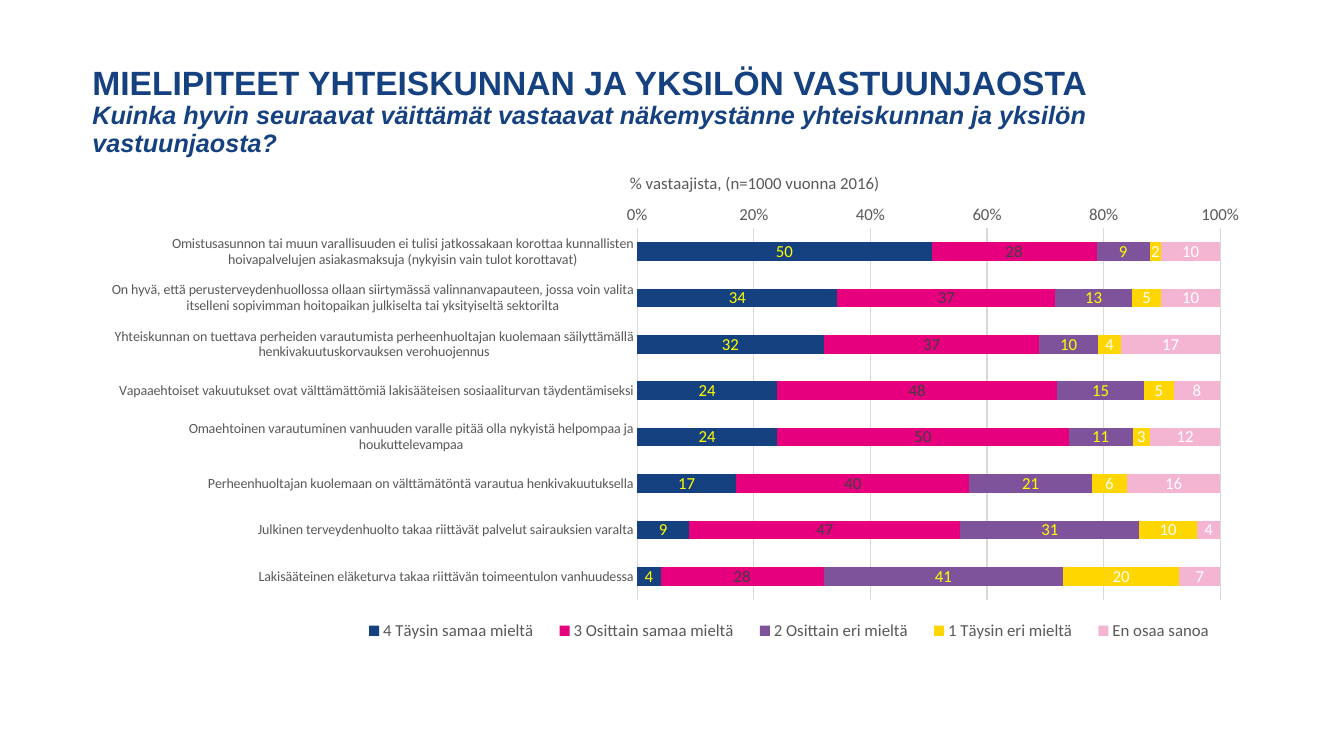
"""Build a slide with a stacked bar chart of opinions on shared responsibility."""
import lxml.etree
import pptx
import pptx.chart.data
import pptx.dml.color
import pptx.enum.chart
import pptx.enum.text
import pptx.oxml.ns
import pptx.util
from pptx.util import Cm, Pt


def color(hex_string):
    return pptx.dml.color.RGBColor.from_string(hex_string)


def place_chart_part(part, **fractions):
    qn = pptx.oxml.ns.qn
    for old_layout in part.findall(qn("c:layout")):
        part.remove(old_layout)
    layout = lxml.etree.Element(qn("c:layout"))
    manual = lxml.etree.SubElement(layout, qn("c:manualLayout"))
    settings = {"xMode": "edge", "yMode": "edge", **fractions}
    if part.tag == qn("c:plotArea"):
        settings = {"layoutTarget": "inner", **settings}
    for name, value in settings.items():
        lxml.etree.SubElement(manual, qn("c:" + name)).set("val", str(value))
    overlay = part.find(qn("c:overlay"))
    part.insert(0 if overlay is None else part.index(overlay), layout)


statements = [
    "Omistusasunnon tai muun varallisuuden ei tulisi jatkossakaan korottaa kunnallisten "
    "hoivapalvelujen asiakasmaksuja (nykyisin vain tulot korottavat)",
    "On hyvä, että perusterveydenhuollossa ollaan siirtymässä valinnanvapauteen, jossa voin "
    "valita itselleni sopivimman hoitopaikan julkiselta tai yksityiseltä sektorilta",
    "Yhteiskunnan on tuettava perheiden varautumista perheenhuoltajan kuolemaan "
    "säilyttämällä henkivakuutuskorvauksen verohuojennus",
    "Vapaaehtoiset vakuutukset ovat välttämättömiä lakisääteisen sosiaaliturvan täydentämiseksi",
    "Omaehtoinen varautuminen vanhuuden varalle pitää olla nykyistä helpompaa ja houkuttelevampaa",
    "Perheenhuoltajan kuolemaan on välttämätöntä varautua henkivakuutuksella",
    "Julkinen terveydenhuolto takaa riittävät palvelut sairauksien varalta",
    "Lakisääteinen eläketurva takaa riittävän toimeentulon vanhuudessa",
]
answers = [
    ("4 Täysin samaa mieltä", [50, 34, 32, 24, 24, 17, 9, 4], "164180", "FFFF00"),
    ("3 Osittain samaa mieltä", [28, 37, 37, 48, 50, 40, 47, 28], "E6007E", "404040"),
    ("2 Osittain eri mieltä", [9, 13, 10, 15, 11, 21, 31, 41], "7F539C", "FFFF00"),
    ("1 Täysin eri mieltä", [2, 5, 4, 5, 3, 6, 10, 20], "FFD600", "FFFFFF"),
    ("En osaa sanoa", [10, 10, 17, 8, 12, 16, 4, 7], "F4B5D3", "FFFFFF"),
]

presentation = pptx.Presentation()
presentation.slide_width = Cm(33.87)
presentation.slide_height = Cm(19.05)
slide = presentation.slides.add_slide(presentation.slide_layouts[6])

title_box = slide.shapes.add_textbox(Cm(2.08), Cm(0.99), Cm(29.21), Cm(3.68))
title_frame = title_box.text_frame
title_frame.word_wrap = True
title_frame.vertical_anchor = pptx.enum.text.MSO_ANCHOR.MIDDLE
title_frame.text = (
    "MIELIPITEET YHTEISKUNNAN JA YKSILÖN VASTUUNJAOSTA\v"
    "Kuinka hyvin seuraavat väittämät vastaavat näkemystänne yhteiskunnan ja yksilön vastuunjaosta?"
)
title_paragraph = title_frame.paragraphs[0]
title_paragraph.line_spacing = 0.9
for run, size, italic in zip(title_paragraph.runs, (24, 18), (False, True)):
    run.font.name = "Arial"
    run.font.size = Pt(size)
    run.font.bold = True
    run.font.italic = italic
    run.font.color.rgb = color("164180")

chart_data = pptx.chart.data.CategoryChartData(number_format="0")
chart_data.categories = statements
for name, values, fill, label_color in answers:
    chart_data.add_series(name, values)
chart = slide.shapes.add_chart(
    pptx.enum.chart.XL_CHART_TYPE.BAR_STACKED_100,
    Cm(2.36), Cm(3.99), Cm(29.21), Cm(12.4), chart_data,
).chart
chart.font.name = "Calibri"
chart.font.size = Pt(10)

chart.has_title = True
chart.chart_title.text_frame.text = "% vastaajista, (n=1000 vuonna 2016)"
chart_title_font = chart.chart_title.text_frame.paragraphs[0].runs[0].font
chart_title_font.bold = False

chart.has_legend = True
chart.legend.position = pptx.enum.chart.XL_LEGEND_POSITION.BOTTOM
chart.legend.include_in_layout = False

category_axis = chart.category_axis
category_axis.reverse_order = True
category_axis.format.line.color.rgb = color("D9D9D9")
category_axis.format.line.width = Pt(0.75)

value_axis = chart.value_axis
value_axis.major_unit = 0.2
value_axis.tick_labels.number_format = "0%"
value_axis.tick_labels.number_format_is_linked = False
value_axis.format.line.fill.background()
value_axis.has_major_gridlines = True
value_axis.major_gridlines.format.line.color.rgb = color("D9D9D9")
value_axis.major_gridlines.format.line.width = Pt(0.75)

for axis in (category_axis, value_axis):
    axis.major_tick_mark = pptx.enum.chart.XL_TICK_MARK.NONE
    axis.minor_tick_mark = pptx.enum.chart.XL_TICK_MARK.NONE

chart_fonts = [
    (chart_title_font, 12),
    (chart.legend.font, 12),
    (category_axis.tick_labels.font, 10),
    (value_axis.tick_labels.font, 12),
]
for font, size in chart_fonts:
    font.name = "Calibri"
    font.size = Pt(size)
    font.color.rgb = color("595959")

plot = chart.plots[0]
plot.gap_width = 150
plot.overlap = 100
plot.vary_by_categories = False
for series, (name, values, fill, label_color) in zip(plot.series, answers):
    series.format.fill.solid()
    series.format.fill.fore_color.rgb = color(fill)
    labels = series.data_labels
    labels.show_value = True
    labels.position = pptx.enum.chart.XL_LABEL_POSITION.CENTER
    labels.font.name = "Calibri"
    labels.font.size = Pt(12)
    labels.font.color.rgb = color(label_color)

chart_element = chart.element.find(pptx.oxml.ns.qn("c:chart"))
place_chart_part(chart_element.find(pptx.oxml.ns.qn("c:title")), x=0.46, y=0.02)
place_chart_part(chart_element.find(pptx.oxml.ns.qn("c:plotArea")), x=0.469, y=0.142, w=0.503, h=0.755)
place_chart_part(chart_element.find(pptx.oxml.ns.qn("c:legend")), x=0.22, y=0.93, w=0.76, h=0.06)

presentation.save("out.pptx")
